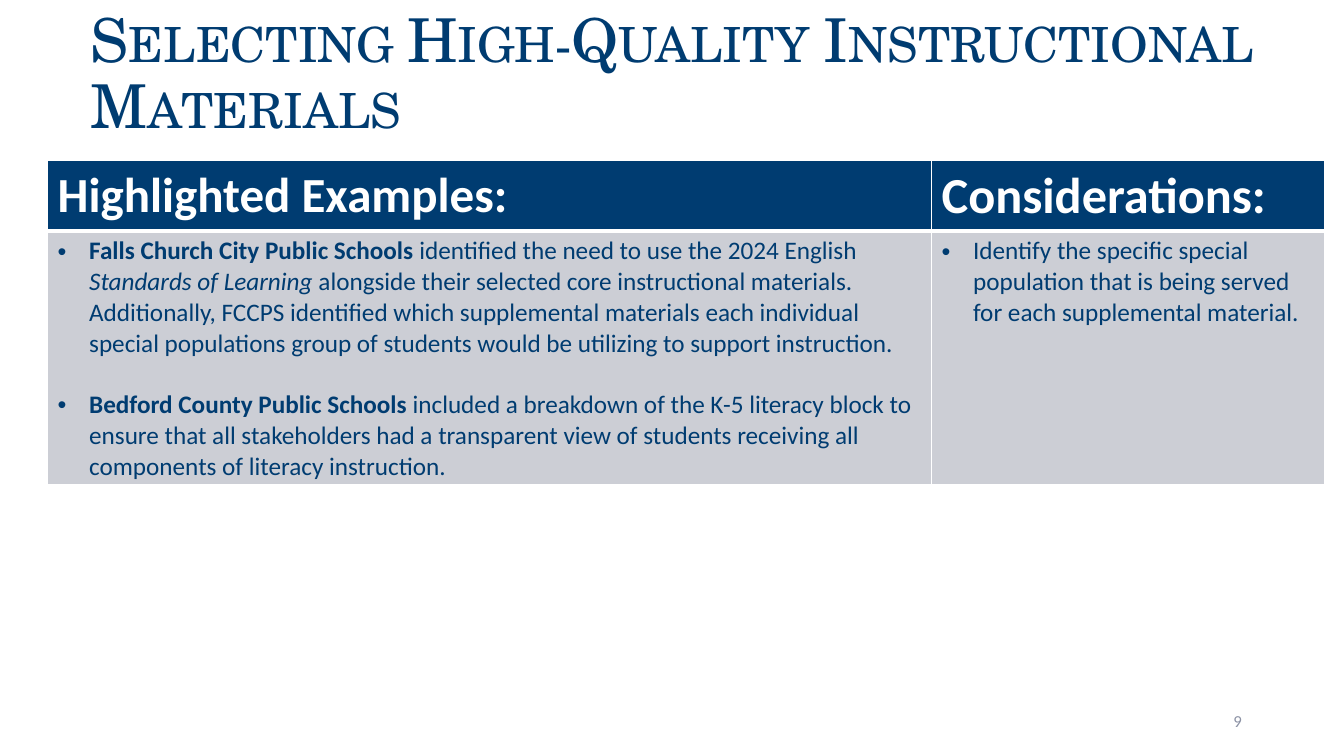
"""Builds a slide with a two-column table of examples and considerations."""
from lxml import etree
from pptx import Presentation
from pptx.dml.color import RGBColor
from pptx.enum.text import MSO_ANCHOR, PP_ALIGN
from pptx.oxml.ns import qn
from pptx.util import Pt

BOTTOM, MIDDLE = MSO_ANCHOR.BOTTOM, MSO_ANCHOR.MIDDLE
RIGHT = PP_ALIGN.RIGHT
NAVY, WHITE, PALE, GRAY = "003C71", "FFFFFF", "CCCED5", "8C92A5"
SERIF, SANS = "TeX Gyre Schola", "Calibri"

TITLE = "Selecting High-Quality Instructional Materials"
PAGE = "9"
HEADS = [("Highlighted Examples:", 35), ("Considerations:", 36)]
BODY = [
    [
        [("Falls Church City Public Schools", "b"),
         (" identified the need to use the 2024 English ", ""),
         ("Standards of Learning", "i"),
         (" alongside their selected core instructional materials. "
          "Additionally, FCCPS identified which supplemental materials each "
          "individual special populations group of students would be "
          "utilizing to support instruction.", "")],
        [("Bedford County Public Schools", "b"),
         (" included a breakdown of the K-5 literacy block to ensure that "
          "all stakeholders had a transparent view of students receiving "
          "all components of literacy instruction.", "")],
    ],
    [
        [("Identify the specific special population that is being served "
          "for each supplemental material.", "")],
    ],
]
COLS, ROWS = [631.4, 280.8], [49.7, 181]
INDENT, GAP = 22.5, 22


def color(code):
    return RGBColor.from_string(code)


def add_run(para, text, size, code, font=SANS, style=""):
    run = para.add_run()
    run.text = text
    face = run.font
    face.size, face.name = Pt(size), font
    face.color.rgb = color(code)
    face.bold, face.italic = "b" in style, "i" in style
    return run


def add_box(slide, left, top, width, height, anchor):
    frame = slide.shapes.add_textbox(
        Pt(left), Pt(top), Pt(width), Pt(height)).text_frame
    frame.word_wrap = True
    frame.vertical_anchor = anchor
    return frame


def add_bullet(para):
    props = para._p.get_or_add_pPr()
    props.set("marL", str(Pt(INDENT)))
    props.set("indent", str(-Pt(INDENT)))
    etree.SubElement(props, qn("a:buFont")).set("typeface", "Arial")
    etree.SubElement(props, qn("a:buChar")).set("char", "•")


def paint(cell, code, low):
    props = cell._tc.get_or_add_tcPr()
    for side, width in (("L", 1), ("R", 1), ("T", 4 - low), ("B", low)):
        line = etree.SubElement(props, qn("a:ln" + side), w=str(Pt(width)))
        fill = etree.SubElement(line, qn("a:solidFill"))
        etree.SubElement(fill, qn("a:srgbClr"), val=WHITE)
    cell.fill.solid()
    cell.fill.fore_color.rgb = color(code)


def add_grid(slide):
    table = slide.shapes.add_table(
        2, 2, Pt(34), Pt(114.5), Pt(sum(COLS)), Pt(sum(ROWS))).table
    for row, height in zip(table.rows, ROWS):
        row.height = Pt(height)
    for col, width in enumerate(COLS):
        table.columns[col].width = Pt(width)
        head, body = table.cell(0, col), table.cell(1, col)
        paint(head, NAVY, 3)
        paint(body, PALE, 1)
        text, size = HEADS[col]
        add_run(head.text_frame.paragraphs[0], text, size, WHITE, style="b")
        frame = body.text_frame
        for num, item in enumerate(BODY[col]):
            para = frame.add_paragraph() if num else frame.paragraphs[0]
            if num:
                para.space_before = Pt(GAP)
            add_bullet(para)
            for words, style in item:
                add_run(para, words, 18, NAVY, style=style)


def main():
    deck = Presentation()
    deck.slide_width, deck.slide_height = Pt(960), Pt(540)
    slide = deck.slides.add_slide(deck.slide_layouts[6])

    frame = add_box(slide, 0, 0, 960, 104.4, BOTTOM)
    frame.margin_left = Pt(64.8)
    para = frame.paragraphs[0]
    para.line_spacing = 0.9
    run = add_run(para, TITLE, 43.2, NAVY, SERIF)
    run.font._element.set("cap", "small")

    add_grid(slide)

    para = add_box(slide, 678.2, 500.4, 216, 28.8, MIDDLE).paragraphs[0]
    para.alignment = RIGHT
    add_run(para, PAGE, 12, GRAY)
    deck.save("out.pptx")


if __name__ == "__main__":
    main()
